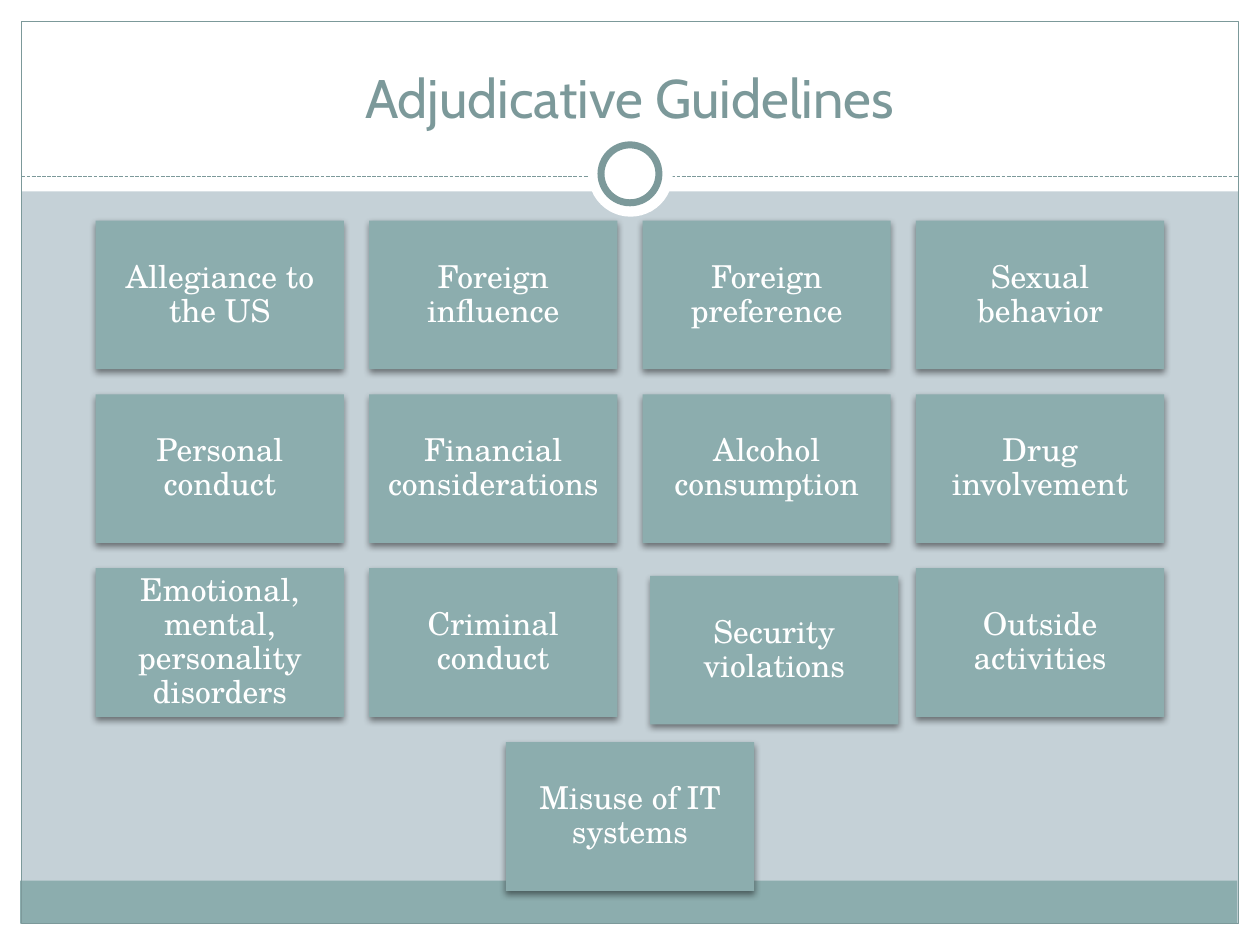
from lxml import etree
from pptx import Presentation
from pptx.dml.color import RGBColor
from pptx.enum import dml, shapes, text
from pptx.oxml import ns
from pptx.util import Inches, Pt

WHITE, TEAL, DARK_TEAL, BACKGROUND = "FFFFFF", "8CADAE", "7C999A", "C5D1D7"
CARD_WIDTH, CARD_HEIGHT, GAP, CARDS_TOP = 1.97, 1.18, 0.2, 1.75
GUIDELINES = [
    ["Allegiance to the US", "Foreign influence", "Foreign preference", "Sexual behavior"],
    ["Personal conduct", "Financial considerations", "Alcohol consumption", "Drug involvement"],
    ["Emotional, mental, personality disorders", "Criminal conduct",
     "Security violations", "Outside activities"],
    ["Misuse of IT systems"],
]
NUDGES = {"Security violations": 0.06}


def color(value):
    """Turn a hex string into a colour."""
    return RGBColor.from_string(value)


def add_box(slide, kind, left, top, width, height, fill=None, line=None, weight=0.75):
    """Add a preset shape with an optional fill and outline."""
    shape = slide.shapes.add_shape(
        kind, Inches(left), Inches(top), Inches(width), Inches(height))
    if fill:
        shape.fill.solid()
        shape.fill.fore_color.rgb = color(fill)
    else:
        shape.fill.background()
    if line:
        shape.line.color.rgb = color(line)
        shape.line.width = Pt(weight)
    else:
        shape.line.fill.background()
    shape.shadow.inherit = False
    return shape


def add_shadow(shape):
    """Give a shape a soft shadow straight below it."""
    effects = shape.element.spPr.find(ns.qn("a:effectLst"))
    shadow = etree.SubElement(
        effects, ns.qn("a:outerShdw"), blurRad=str(Pt(4)), dist=str(Pt(2)),
        dir="5400000", algn="ctr", rotWithShape="0")
    black = etree.SubElement(shadow, ns.qn("a:srgbClr"), val="000000")
    etree.SubElement(black, ns.qn("a:alpha"), val="45000")


def write(shape, wording, font, size, ink, anchor):
    """Write one centred paragraph into a shape."""
    frame = shape.text_frame
    frame.text = wording
    frame.word_wrap = True
    frame.vertical_anchor = anchor
    paragraph = frame.paragraphs[0]
    paragraph.alignment = text.PP_ALIGN.CENTER
    run_font = paragraph.runs[0].font
    run_font.name, run_font.size = font, Pt(size)
    run_font.color.rgb = color(ink)
    return frame


def add_frame(slide):
    """Add the white margins, the footer band and the outline."""
    rectangle = shapes.MSO_SHAPE.RECTANGLE
    for place in [(0, 7.33, 10, 0.17), (0, 0, 10, 1.52),
                  (0, 0, 0.17, 7.5), (9.83, 0, 0.17, 7.5)]:
        add_box(slide, rectangle, *place, fill=WHITE)
    add_box(slide, rectangle, 0.16, 6.99, 9.66, 0.34, fill=TEAL)
    add_box(slide, rectangle, 0.17, 0.17, 9.66, 7.16, line=DARK_TEAL)


def add_divider(slide):
    """Add the dashed rule with the ring at its middle."""
    rule = slide.shapes.add_connector(
        shapes.MSO_CONNECTOR.STRAIGHT, Inches(0.17), Inches(1.4), Inches(9.83), Inches(1.4))
    rule.line.color.rgb = color(DARK_TEAL)
    rule.line.width = Pt(0.75)
    rule.line.dash_style = dml.MSO_LINE.SQUARE_DOT
    etree.SubElement(rule.element.spPr, ns.qn("a:effectLst"))
    oval = shapes.MSO_SHAPE.OVAL
    add_box(slide, oval, 4.67, 1.05, 0.67, 0.67, fill=WHITE)
    add_box(slide, oval, 4.77, 1.15, 0.46, 0.46, fill=WHITE, line=DARK_TEAL, weight=4)


def add_title(slide, wording):
    """Add the slide title."""
    box = slide.shapes.add_textbox(Inches(0.33), Inches(0.25), Inches(9.33), Inches(0.83))
    write(box, wording, "Cabin", 31, DARK_TEAL, text.MSO_ANCHOR.BOTTOM)


def add_card(slide, wording, left, top):
    """Add one guideline card."""
    card = add_box(slide, shapes.MSO_SHAPE.RECTANGLE, left, top,
                   CARD_WIDTH, CARD_HEIGHT, fill=TEAL)
    add_shadow(card)
    frame = write(card, wording, "TeX Gyre Schola", 18, WHITE, text.MSO_ANCHOR.MIDDLE)
    frame.margin_left = frame.margin_right = Inches(0.07)
    frame.margin_top = frame.margin_bottom = Inches(0.07)
    frame.paragraphs[0].line_spacing = 0.9


def add_cards(slide):
    """Lay out the guideline cards in centred rows."""
    for row, names in enumerate(GUIDELINES):
        row_width = len(names) * (CARD_WIDTH + GAP) - GAP
        start = (10 - row_width) / 2
        top = CARDS_TOP + row * (CARD_HEIGHT + GAP)
        for column, name in enumerate(names):
            nudge = NUDGES.get(name, 0)
            left = start + column * (CARD_WIDTH + GAP)
            add_card(slide, name, left + nudge, top + nudge)


def main():
    """Build the slide and save it."""
    presentation = Presentation()
    presentation.slide_width, presentation.slide_height = Inches(10), Inches(7.5)
    slide = presentation.slides.add_slide(presentation.slide_layouts[6])
    slide.background.fill.solid()
    slide.background.fill.fore_color.rgb = color(BACKGROUND)
    add_frame(slide)
    add_divider(slide)
    add_title(slide, "Adjudicative Guidelines")
    add_cards(slide)
    presentation.save("out.pptx")


if __name__ == "__main__":
    main()
